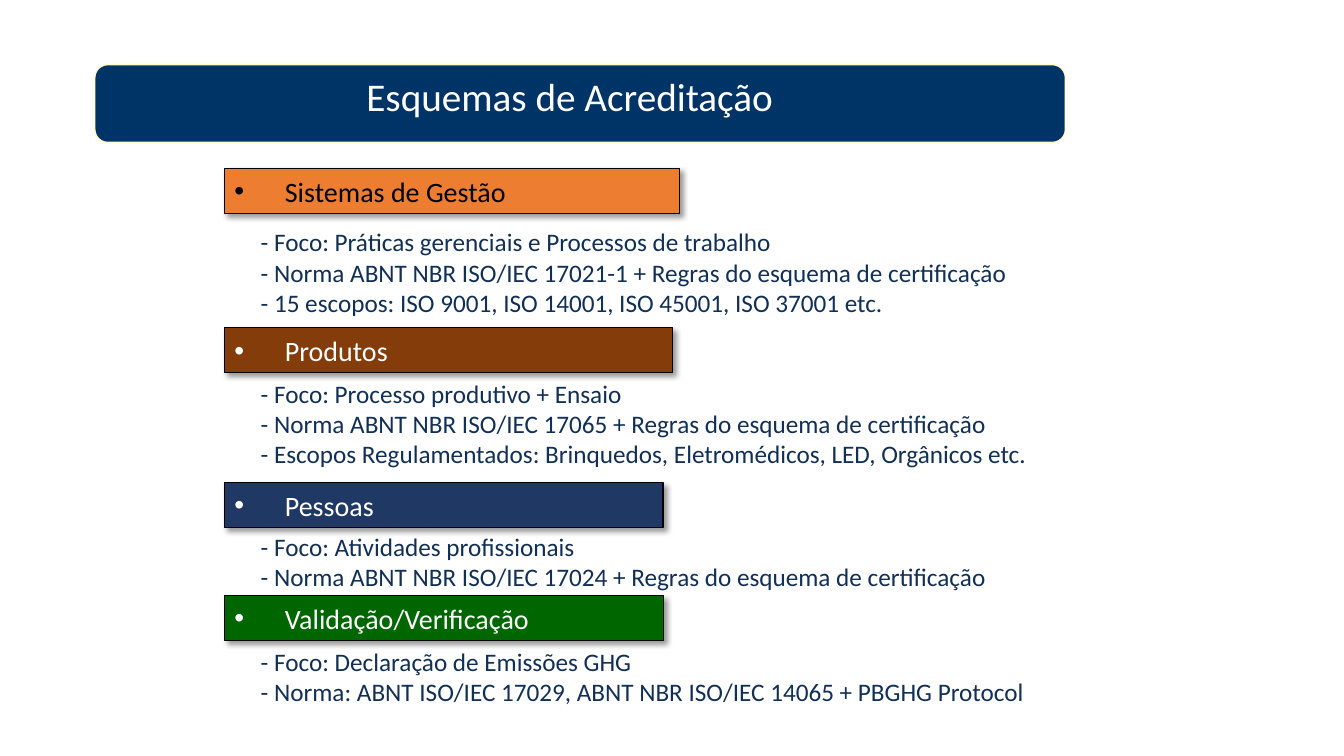
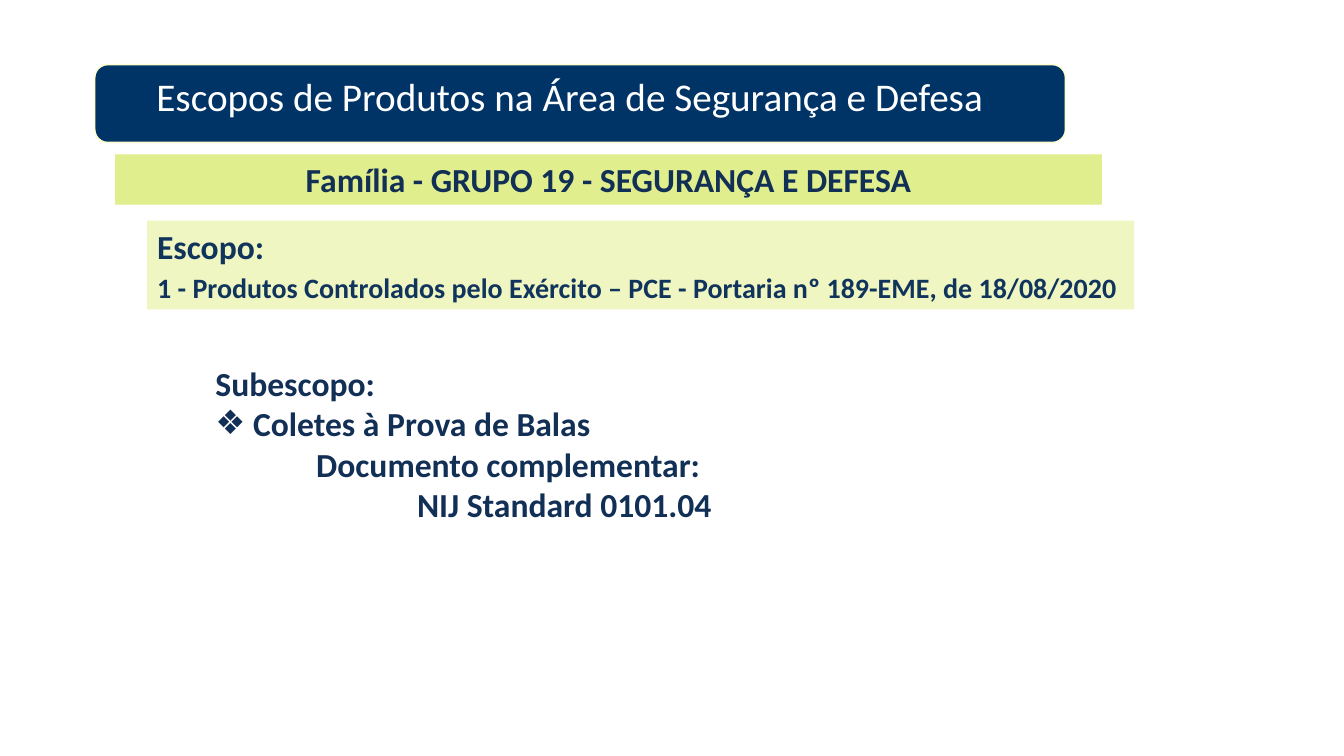
import pptx
import pptx.util
import pptx.dml.color
import pptx.enum.shapes
import pptx.enum.text
import pptx.oxml
import pptx.oxml.ns

Cm = pptx.util.Cm
Pt = pptx.util.Pt
RGB = pptx.dml.color.RGBColor
SHAPE = pptx.enum.shapes.MSO_SHAPE
ALIGN = pptx.enum.text.PP_ALIGN
ANCHOR = pptx.enum.text.MSO_ANCHOR

FONT = "Calibri"
WHITE = RGB(0xFF, 0xFF, 0xFF)
BLACK = RGB(0x00, 0x00, 0x00)
NAVY = RGB(0x00, 0x33, 0x66)
CREAM = RGB(0xFF, 0xFF, 0xCC)
INK = RGB(0x12, 0x2F, 0x56)
SCOPE_INK = RGB(0x10, 0x34, 0x5C)
ORANGE = RGB(0xED, 0x7D, 0x31)
BROWN = RGB(0x84, 0x3C, 0x0B)
BLUE = RGB(0x20, 0x38, 0x64)
GREEN = RGB(0x00, 0x66, 0x00)
LIME = RGB(0xE1, 0xEE, 0x8D)
PALE_LIME = RGB(0xEF, 0xF6, 0xC2)

SHADOW = (
    '<a:outerShdw %s blurRad="50800" dist="38100" dir="2700000" algn="tl" rotWithShape="0">'
    '<a:srgbClr val="000000"><a:alpha val="40000"/></a:srgbClr></a:outerShdw>'
) % pptx.oxml.ns.nsdecls("a")

SECTIONS = [
    (4.24, 11.46, 1.14, 1.35, ORANGE, BLACK, "Sistemas de Gestão", [
        "- Foco: Práticas gerenciais e Processos de trabalho",
        "- Norma ABNT NBR ISO/IEC 17021-1 + Regras do esquema de certificação",
        "- 15 escopos: ISO 9001, ISO 14001, ISO 45001, ISO 37001 etc."]),
    (8.26, 11.28, 1.14, 1.14, BROWN, WHITE, "Produtos", [
        "- Foco: Processo produtivo + Ensaio",
        "- Norma ABNT NBR ISO/IEC 17065 + Regras do esquema de certificação",
        "- Escopos Regulamentados: Brinquedos, Eletromédicos, LED, Orgânicos etc."]),
    (12.17, 11.05, 1.12, 1.09, BLUE, WHITE, "Pessoas", [
        "- Foco: Atividades profissionais",
        "- Norma ABNT NBR ISO/IEC 17024 + Regras do esquema de certificação"]),
    (15.01, 11.07, 1.12, 1.14, GREEN, WHITE, "Validação/Verificação", [
        "- Foco: Declaração de Emissões GHG",
        "- Norma: ABNT ISO/IEC 17029, ABNT NBR ISO/IEC 14065 + PBGHG Protocol"]),
]


def add_text(tf, text, size=18, color=INK, bold=False, align=ALIGN.LEFT,
             after=0, indent=0, bullet=None):
    """Append one formatted paragraph to a text frame."""
    tf.word_wrap = True
    p = tf.paragraphs[0]
    if p.runs:
        p = tf.add_paragraph()
    p.alignment = align
    p.space_after = Pt(after)
    pPr = p._p.get_or_add_pPr()
    pPr.set("marL", str(Cm(indent)))
    if bullet:
        pPr.set("indent", str(-Cm(indent)))
        pPr.append(pptx.oxml.parse_xml(
            '<a:buFont %s typeface="Arial"/>' % pptx.oxml.ns.nsdecls("a")))
        pPr.append(pptx.oxml.parse_xml(
            '<a:buChar %s char="%s"/>' % (pptx.oxml.ns.nsdecls("a"), bullet)))
    r = p.add_run()
    r.text = text
    r.font.name = FONT
    r.font.size = Pt(size)
    r.font.bold = bold
    r.font.color.rgb = color


def add_box(slide, box, fill, line=None, width=0.75, shape=SHAPE.RECTANGLE):
    """Draw a filled shape in a box given in centimetres."""
    sp = slide.shapes.add_shape(shape, *map(Cm, box))
    sp.shadow.inherit = False
    sp.fill.solid()
    sp.fill.fore_color.rgb = fill
    if line is None:
        sp.line.fill.background()
    else:
        sp.line.color.rgb = line
        sp.line.width = Pt(width)
    sp.text_frame.vertical_anchor = ANCHOR.TOP
    return sp


def add_textbox(slide, box):
    """Add a text box in centimetres and return its text frame."""
    return slide.shapes.add_textbox(*map(Cm, box)).text_frame


def add_title(slide, text, box=(2.39, 1.63, 24.46, 1.96)):
    """Draw the rounded title band and its heading."""
    left, top, width, height = box
    sp = add_box(slide, box, NAVY, CREAM, 1, SHAPE.ROUNDED_RECTANGLE)
    sp.adjustments[0] = 0.167
    tf = add_textbox(slide, (left - 0.43, top + 0.07, width + 0.33, height + 0.07))
    add_text(tf, text, size=28, color=WHITE, align=ALIGN.CENTER)


def add_section(slide, box, body_offset, fill, color, heading, lines):
    """Draw a shadowed heading bar with its detail lines below."""
    left, top, width, height = box
    sp = add_box(slide, box, fill, BLACK)
    effects = sp._element.spPr.find(pptx.oxml.ns.qn("a:effectLst"))
    effects.append(pptx.oxml.parse_xml(SHADOW))
    sp.text_frame.vertical_anchor = ANCHOR.MIDDLE
    add_text(sp.text_frame, heading, size=20, color=color, indent=1.27, bullet="•")
    tf = add_textbox(slide, (left + 0.66, top + body_offset, 22.3, 0.25 + 0.8 * len(lines)))
    for line in lines:
        add_text(tf, line)


def add_scope_panels(slide, box):
    """Draw the family band and the scope panel stepped to its right."""
    left, top, width, height = box
    family = add_box(slide, box, LIME).text_frame
    add_text(family, "Família - GRUPO 19 - SEGURANÇA E DEFESA", size=24, bold=True,
             align=ALIGN.CENTER, after=3)
    scope = add_box(slide, (left + 0.81, top + 1.67, width, 2.24), PALE_LIME).text_frame
    add_text(scope, "Escopo:", size=24, color=SCOPE_INK, bold=True, after=3)
    add_text(scope, "1 - Produtos Controlados pelo Exército – PCE - Portaria nº 189-EME, de 18/08/2020",
             size=20, color=SCOPE_INK, bold=True, after=3)


def add_subscope(slide, box):
    """Write the subscope outline."""
    tf = add_textbox(slide, box)
    for text, indent, bullet in [
            ("Subescopo:", 0, None),
            ("Coletes à Prova de Balas", 0.95, "❖"),
            ("Documento complementar:", 2.54, None),
            ("NIJ Standard 0101.04", 5.08, None)]:
        add_text(tf, text, size=24, bold=True, indent=indent, bullet=bullet)


def build_schemes(slide):
    """Build the accreditation schemes slide."""
    add_title(slide, "Esquemas de Acreditação")
    for top, width, height, *content in SECTIONS:
        add_section(slide, (5.66, top, width, height), *content)


def build_scopes(slide):
    """Build the security and defence scopes slide."""
    add_title(slide, "Escopos de Produtos na Área de Segurança e Defesa")
    add_scope_panels(slide, (2.9, 3.89, 24.87, 1.27))
    add_subscope(slide, (5.18, 9.02, 21.97, 5.38))


def main():
    """Create and save the presentation."""
    prs = pptx.Presentation()
    prs.slide_width, prs.slide_height = Cm(33.87), Cm(19.05)
    for build in (build_schemes, build_scopes):
        build(prs.slides.add_slide(prs.slide_layouts[6]))
    prs.save("out.pptx")


if __name__ == "__main__":
    main()
